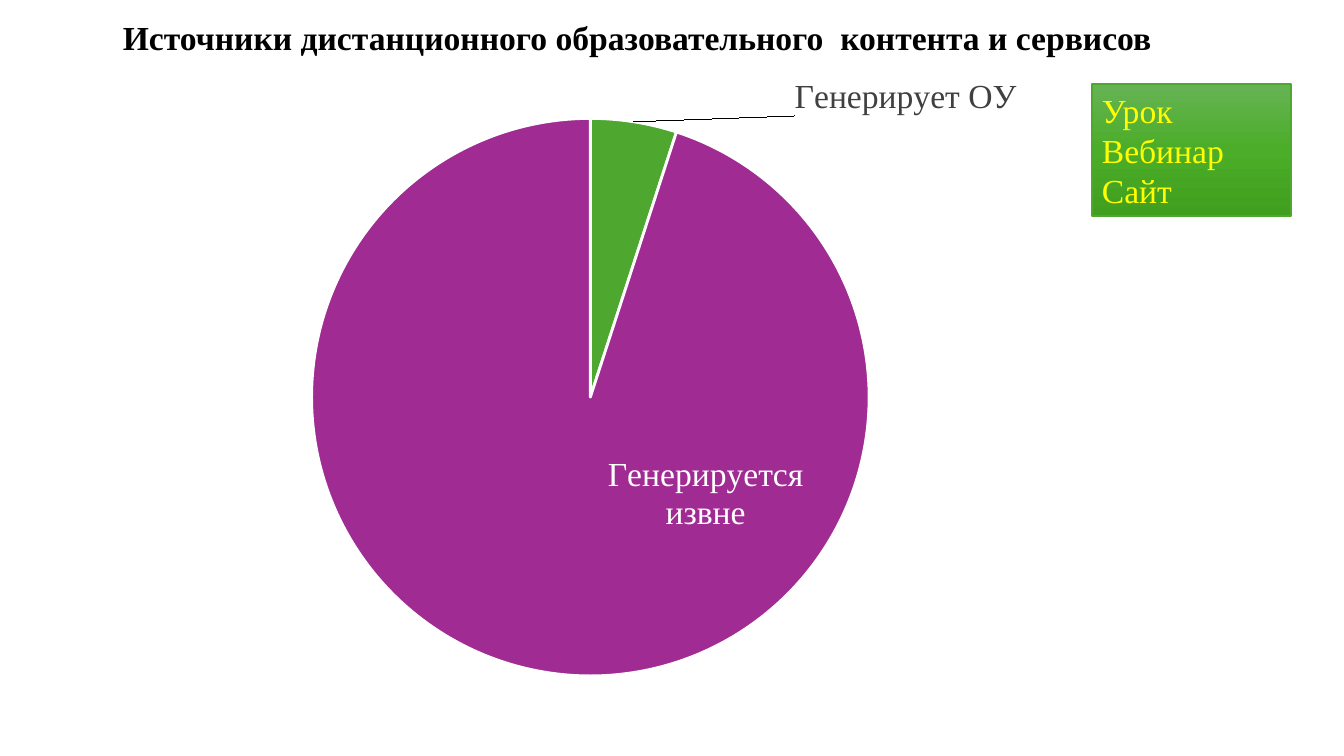
from copy import deepcopy
from dataclasses import dataclass

from lxml import etree
from pptx import Presentation
from pptx.chart.data import CategoryChartData
from pptx.dml.color import RGBColor
from pptx.enum.chart import XL_CHART_TYPE, XL_LABEL_POSITION
from pptx.enum.shapes import MSO_SHAPE
from pptx.enum.text import MSO_ANCHOR, PP_ALIGN
from pptx.util import Emu, Pt

PIE = XL_CHART_TYPE.PIE
OUT = XL_LABEL_POSITION.OUTSIDE_END
MID = XL_LABEL_POSITION.CENTER
RECT = MSO_SHAPE.RECTANGLE
TOP, MIDDLE = MSO_ANCHOR.TOP, MSO_ANCHOR.MIDDLE
LEFT = PP_ALIGN.LEFT
SCALE = 9071
FONT = "Times New Roman"
CHART_NS = "http://schemas.openxmlformats.org/drawingml/2006/chart"
COLORS = {
    "black": "000000",
    "white": "FFFFFF",
    "gray": "404040",
    "yellow": "FFFF00",
    "green": "4EA72E",
    "purple": "A02B93",
    "light": "66B354",
    "mid": "4BAD28",
    "dark": "409F1E",
}


@dataclass(frozen=True)
class Box:
    x: int
    y: int
    w: int
    h: int

    def emu(self) -> list[Emu]:
        return [Emu(n * SCALE) for n in (self.x, self.y, self.w, self.h)]


@dataclass(frozen=True)
class Slice:
    name: str
    lines: list[str]
    value: int
    fill: str
    ink: str
    place: XL_LABEL_POSITION
    shift: dict[str, float]


SLICES = [
    Slice("Генерирует ОУ", ["Генерирует ОУ"], 5, "green", "gray", OUT,
          {"x": 0.14, "y": 0}),
    Slice("Генерируется извне", ["Генерируется", "извне"], 95, "purple", "white", MID,
          {"x": 0.12, "y": -0.06}),
]
PLOT = {"x": 0.02, "y": 0.08, "w": 0.91, "h": 0.82}


def color(name: str) -> RGBColor:
    return RGBColor.from_string(COLORS[name])


def write(frame, lines: list[str], *, ink: str, bold: bool = False, align=None) -> None:
    frame.text = "\n".join(lines)
    for para in frame.paragraphs:
        if align is not None:
            para.alignment = align
        for run in para.runs:
            font = run.font
            font.name, font.size, font.bold = FONT, Pt(24), bold
            font.color.rgb = color(ink)


def layout(spots: dict[str, float], inner: bool = False):
    root = etree.Element(f"{{{CHART_NS}}}layout", nsmap={"c": CHART_NS})
    manual = etree.SubElement(root, f"{{{CHART_NS}}}manualLayout")
    modes = {"layoutTarget": "inner", "xMode": "edge", "yMode": "edge"} if inner else {}
    for tag, val in {**modes, **spots}.items():
        etree.SubElement(manual, f"{{{CHART_NS}}}{tag}", val=str(val))
    return root


def draw_pie(slide, box: Box) -> None:
    data = CategoryChartData()
    data.categories = [part.name for part in SLICES]
    data.add_series("Series 1", [part.value for part in SLICES])
    chart = slide.shapes.add_chart(PIE, *box.emu(), data).chart
    chart.has_legend = chart.has_title = False
    chart.font.name, chart.font.size = FONT, Pt(24)
    chart.font.color.rgb = color("gray")

    area = chart.plots[0]
    area.vary_by_categories = True
    holder = area._element.getparent()
    for old in holder.findall(f"{{{CHART_NS}}}layout"):
        holder.remove(old)
    holder.insert(0, layout(PLOT, inner=True))

    series = area.series[0]
    series.data_labels.show_category_name = True
    series.data_labels.show_value = False
    for index, part in enumerate(SLICES):
        point = series.points[index]
        point.format.fill.solid()
        point.format.fill.fore_color.rgb = color(part.fill)
        point.format.line.color.rgb = color("white")
        point.format.line.width = Pt(2)
        label = point.data_label
        write(label.text_frame, part.lines, ink=part.ink)
        label.position = part.place
        node = series.data_labels._element.findall(f"{{{CHART_NS}}}dLbl")[index]
        node.insert(1, layout(part.shift))


def draw_title(slide, box: Box) -> None:
    frame = slide.shapes.add_textbox(*box.emu()).text_frame
    frame.word_wrap = True
    frame.vertical_anchor = TOP
    write(frame, ["Источники дистанционного образовательного  контента и сервисов"],
          ink="black", bold=True)


def draw_card(slide, box: Box) -> None:
    card = slide.shapes.add_shape(RECT, *box.emu())
    card.shadow.inherit = False
    card.line.color.rgb = color("green")
    card.line.width = Pt(1)
    card.fill.gradient()
    card.fill.gradient_angle = 270
    first = card.fill.gradient_stops[0]._gs
    first.addnext(deepcopy(first))
    for stop, spot, name in zip(card.fill.gradient_stops, (0, 0.5, 1),
                                ("light", "mid", "dark")):
        stop.position = spot
        stop.color.rgb = color(name)
    frame = card.text_frame
    frame.word_wrap = True
    frame.vertical_anchor = MIDDLE
    write(frame, ["Урок", "Вебинар", "Сайт"], ink="yellow", align=LEFT)


def main() -> None:
    deck = Presentation()
    deck.slide_width, deck.slide_height = Emu(1344 * SCALE), Emu(756 * SCALE)
    slide = deck.slides.add_slide(deck.slide_layouts[6])
    draw_pie(slide, Box(48, 64, 1142, 680))
    draw_title(slide, Box(113, 12, 1066, 50))
    draw_card(slide, Box(1092, 84, 199, 132))
    deck.save("out.pptx")


if __name__ == "__main__":
    main()
